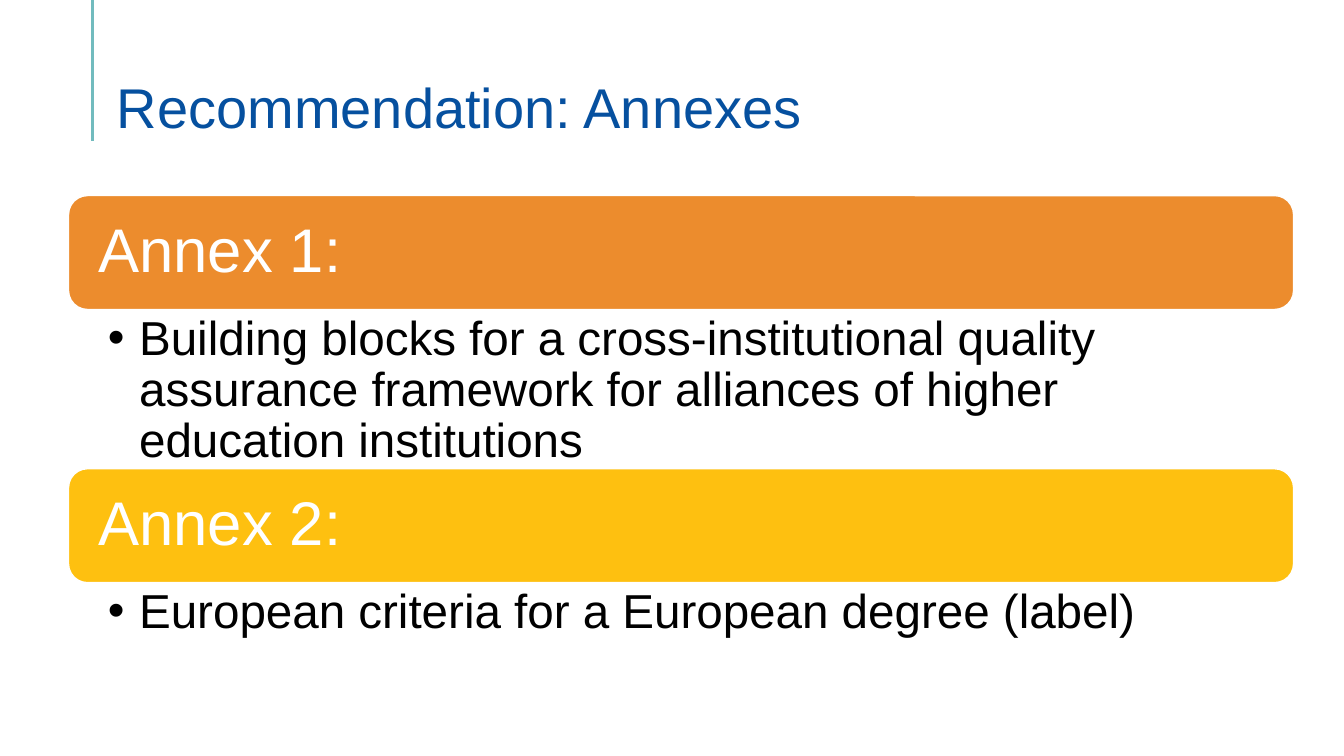
from lxml import etree
from pptx import Presentation, util as u
from pptx.dml.color import RGBColor
from pptx.enum import shapes, text
from pptx.oxml.ns import qn

COLORS = {"teal": "71BBBE", "blue": "06509F", "orange": "EC8C2D",
          "yellow": "FEC010", "white": "FFFFFF", "black": "000000"}
FONT = "Arial"

# Text formats: sizes in points, insets (left, top, right, bottom) in inches
FORMATS = {
    "title": {"size": 40, "color": "blue", "after": 0,
              "anchor": text.MSO_ANCHOR.BOTTOM, "insets": (0.1, 0.05, 0.1, 0)},
    "bar": {"size": 44, "color": "white", "after": 0.35,
            "anchor": text.MSO_ANCHOR.MIDDLE, "insets": (0.24, 0.18, 0.24, 0.18)},
    "list": {"size": 34, "color": "black", "after": 0.2,
             "anchor": text.MSO_ANCHOR.TOP, "insets": (0.39, 0.06, 0.34, 0.06)},
}


class Deck:
    """Holds the style and the current slide; lengths are percent of the slide."""

    def __init__(self, prs, layout):
        self.prs = prs
        self.s = prs.slides.add_slide(prs.slide_layouts[layout])

    def rgb(self, name):
        return RGBColor.from_string(COLORS[name])

    def x(self, share):
        return u.Emu(round(self.prs.slide_width * share / 100))

    def y(self, share):
        return u.Emu(round(self.prs.slide_height * share / 100))

    def box(self, left, top, width, height):
        return self.x(left), self.y(top), self.x(width), self.y(height)

    def set_text(self, sp, words, style):
        fmt = FORMATS[style]
        tf = sp.text_frame
        frame = dict(zip(("margin_left", "margin_top", "margin_right", "margin_bottom"),
                         map(u.Inches, fmt["insets"])))
        frame.update(word_wrap=True, auto_size=text.MSO_AUTO_SIZE.NONE,
                     vertical_anchor=fmt["anchor"])
        for name, value in frame.items():
            setattr(tf, name, value)
        p = tf.paragraphs[0]
        spacing = {"alignment": text.PP_ALIGN.LEFT, "line_spacing": 0.9,
                   "space_before": u.Pt(0),
                   "space_after": u.Pt(fmt["size"] * fmt["after"])}
        for name, value in spacing.items():
            setattr(p, name, value)
        r = p.add_run()
        r.text = words
        for name, value in {"name": FONT, "size": u.Pt(fmt["size"]), "bold": False}.items():
            setattr(r.font, name, value)
        r.font.color.rgb = self.rgb(fmt["color"])
        return p

    def placeholder(self, idx, area, words, style):
        sp = self.s.placeholders[idx]
        for name, value in zip(("left", "top", "width", "height"), self.box(*area)):
            setattr(sp, name, value)
        return self.set_text(sp, words, style)

    def title(self, area, words):
        self.placeholder(0, area, words, "title")

    def bullet(self, idx, area, words):
        p = self.placeholder(idx, area, words, "list")
        p.level = 1
        pPr = p._p.get_or_add_pPr()
        pPr.set("marL", str(u.Inches(0.31)))
        pPr.set("indent", str(-u.Inches(0.31)))
        color = etree.SubElement(pPr, qn("a:buClr"))
        etree.SubElement(color, qn("a:srgbClr"), val=COLORS["black"])
        etree.SubElement(pPr, qn("a:buFont"), typeface=FONT)
        etree.SubElement(pPr, qn("a:buChar"), char="•")

    def bar(self, area, words, color):
        sp = self.s.shapes.add_shape(shapes.MSO_SHAPE.ROUNDED_RECTANGLE, *self.box(*area))
        sp.shadow.inherit = False
        sp.fill.solid()
        sp.fill.fore_color.rgb = self.rgb(color)
        sp.line.color.rgb = self.rgb("white")
        sp.line.width = u.Pt(1)
        self.set_text(sp, words, "bar")

    def rule(self, left, top, bottom, color):
        line = self.s.shapes.add_connector(shapes.MSO_CONNECTOR.STRAIGHT, self.x(left),
                                           self.y(top), self.x(left), self.y(bottom))
        line.line.color.rgb = self.rgb(color)
        line.line.width = u.Pt(2.25)
        etree.SubElement(line._element.spPr, qn("a:effectLst"))


def main():
    prs = Presentation()
    prs.slide_width, prs.slide_height = u.Inches(13.33), u.Inches(7.5)
    deck = Deck(prs, 3)

    # Heading with its vertical rule
    deck.rule(6.9, 0, 18.67, "teal")
    deck.title((7.95, 7.07, 86.27, 11.47), "Recommendation: Annexes")

    # One coloured bar and one list per annex
    left, width, top, pitch = 5.1, 91.15, 25.87, 36.13
    annexes = [
        ("orange", 21.2, "Building blocks for a cross-institutional quality assurance "
                         "framework for alliances of higher education institutions"),
        ("yellow", 10.67, "European criteria for a European degree (label)"),
    ]
    for n, (color, height, words) in enumerate(annexes, 1):
        row = top + (n - 1) * pitch
        deck.bar((left, row, width, 15.07), f"Annex {n}:", color)
        deck.bullet(n, (left, row + 14.87, width, height), words)

    prs.save("out.pptx")


if __name__ == "__main__":
    main()
